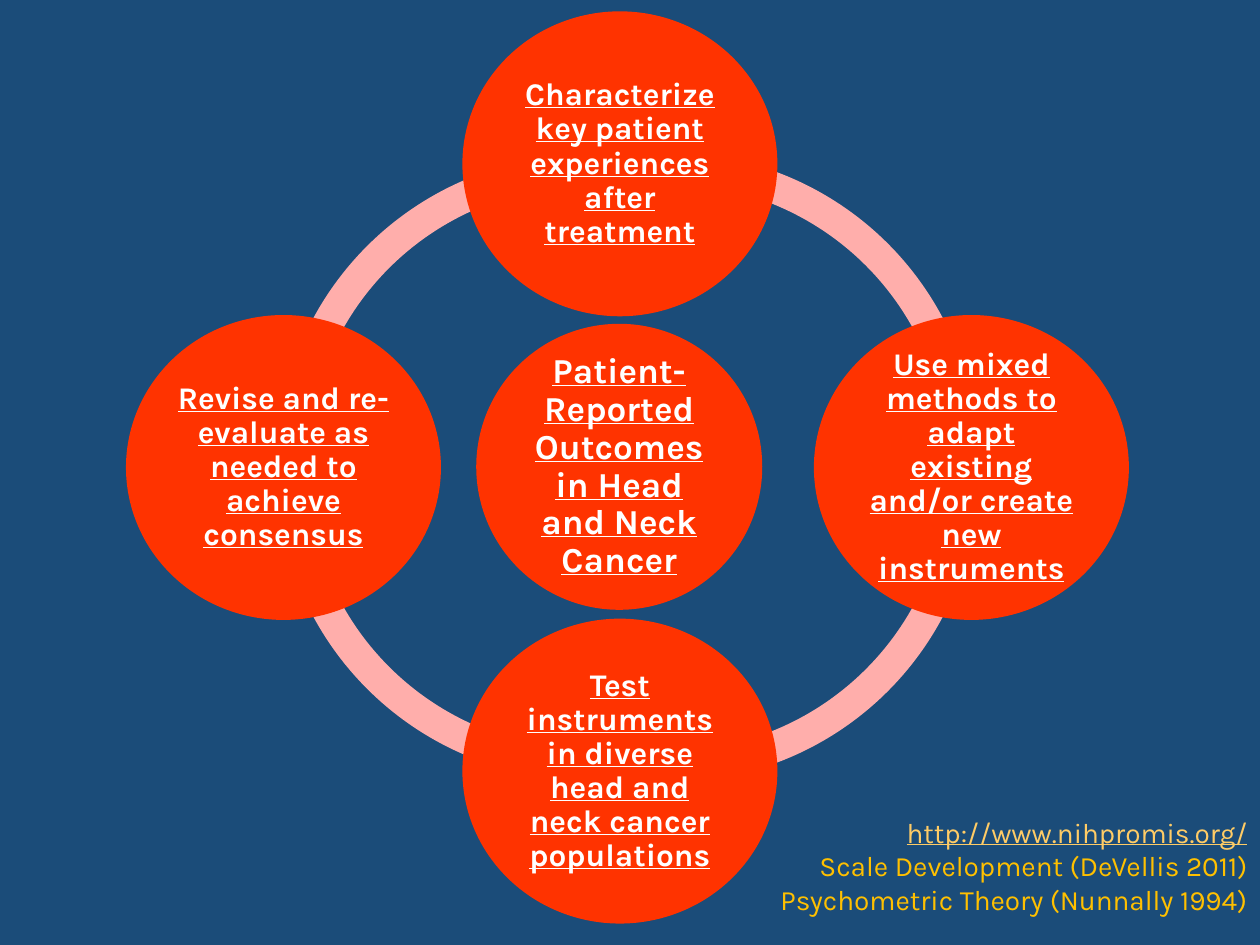
from pptx import Presentation
from pptx.dml.color import RGBColor
from pptx.enum.shapes import MSO_SHAPE
from pptx.enum.text import MSO_ANCHOR, PP_ALIGN
from pptx.util import Inches, Pt


def set_fill(obj, color):
    obj.fill.solid()
    obj.fill.fore_color.rgb = RGBColor.from_string(color)


def add_text(p, text, color, **fmt):
    r = p.add_run()
    r.text = text
    r.font.color.rgb = RGBColor.from_string(color)
    for name, value in {"name": "Karla", **fmt}.items():
        setattr(r.font, name, value)


prs = Presentation()
prs.slide_width, prs.slide_height = Inches(10), Inches(7.5)
s = prs.slides.add_slide(prs.slide_layouts[6])
set_fill(s.background, "1B4C79")

# Ring: left, top, start and end adjustment of each quarter
arcs = [
    (2.19, 1.23, 107.81, 165.66),
    (2.19, 1.25, 50.34, 108.2),
    (2.83, 1.27, 215.62, 59.42),
    (2.83, 1.21, 156.58, 0.47),
]
for left, top, start, end in arcs:
    sp = s.shapes.add_shape(MSO_SHAPE.BLOCK_ARC, Inches(left), Inches(top),
                            Inches(4.94), Inches(4.94))
    sp.shadow.inherit = False
    set_fill(sp, "FFAEAB")
    sp.line.fill.background()
    for i, value in enumerate((start, end, 0.05)):
        sp.adjustments[i] = value

# Hub and the four steps around it: left, top, width, height, size, text
circles = [
    (3.78, 2.57, 2.27, 2.27, 20, "Patient-Reported Outcomes in Head and Neck Cancer"),
    (3.67, 0.09, 2.5, 2.42, 18, "Characterize key patient experiences after treatment"),
    (6.46, 2.5, 2.5, 2.42, 18,
     "Use mixed methods to adapt existing and/or create new instruments"),
    (3.67, 4.91, 2.5, 2.42, 18,
     "Test instruments in diverse head and neck cancer populations"),
    (1, 2.5, 2.5, 2.42, 18, "Revise and re-evaluate as needed to achieve consensus"),
]
for left, top, width, height, size, text in circles:
    sp = s.shapes.add_shape(MSO_SHAPE.OVAL, Inches(left), Inches(top),
                            Inches(width), Inches(height))
    sp.shadow.inherit = False
    set_fill(sp, "FF3300")
    sp.line.fill.background()
    tf = sp.text_frame
    tf.word_wrap = True
    tf.vertical_anchor = MSO_ANCHOR.MIDDLE
    for side in ("left", "top", "right", "bottom"):
        setattr(tf, f"margin_{side}", Inches(0.03))
    p = tf.paragraphs[0]
    p.alignment = PP_ALIGN.CENTER
    p.line_spacing = 0.9
    add_text(p, text, "FFFFFF", size=Pt(size), bold=True, underline=True)

# References
sources = [
    ("http://www.nihpromis.org/", "FFCC66", True),
    ("Scale Development (DeVellis 2011)", "FFC000", False),
    ("Psychometric Theory (Nunnally 1994)", "FFC000", False),
]
tf = s.shapes.add_textbox(Inches(5.83), Inches(6.42), Inches(4.17), Inches(0.91)).text_frame
tf.word_wrap = True
for i, (text, color, underline) in enumerate(sources):
    p = tf.add_paragraph() if i else tf.paragraphs[0]
    p.alignment = PP_ALIGN.RIGHT
    add_text(p, text, color, size=Pt(16), underline=underline)

prs.save("out.pptx")
